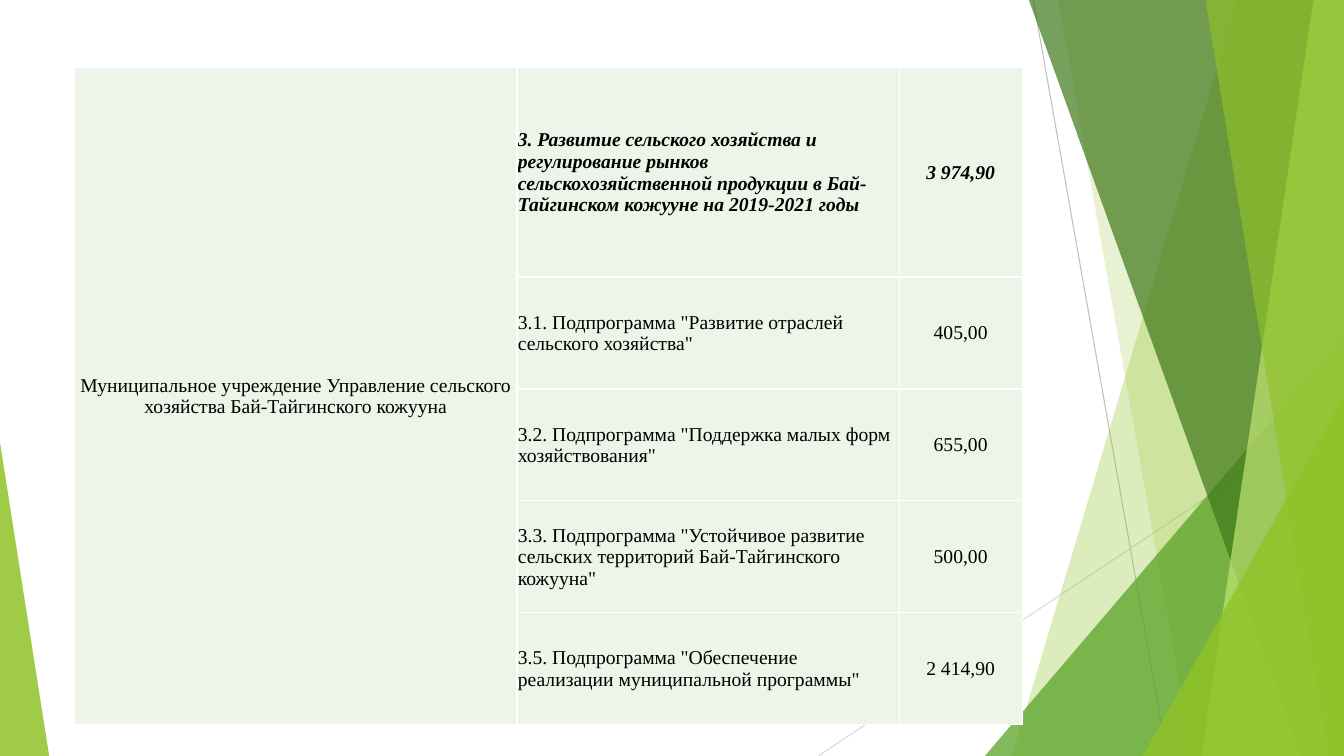
from lxml import etree
from pptx import Presentation
from pptx import util as u
from pptx.dml.color import RGBColor
from pptx.enum import shapes, text
from pptx.oxml.ns import qn

WIDTH, HEIGHT = 33.87, 19.05
COLORS = {
    "lime": "90C226", "green": "54A021", "forest": "3F7819", "pale": "C0E474",
    "gray": "BFBFBF", "silver": "D9D9D9", "cell": "EEF4E8",
    "white": "FFFFFF", "black": "000000",
}
VEILS = [
    (31.19, 25.5, "lime", 30),
    (26.67, 30.05, "lime", 20),
    (25.93, 32.79, "forest", 70),
    (33.1, 30.28, "pale", 70),
    (30.38, 33.48, "lime", 65),
]
OWNER = "Муниципальное учреждение Управление сельского хозяйства Бай-Тайгинского кожууна"
PROGRAMS = [
    ("3. Развитие сельского хозяйства и регулирование рынков сельскохозяйственной "
     "продукции в Бай-Тайгинском кожууне на 2019-2021 годы", "3 974,90"),
    ('3.1. Подпрограмма "Развитие отраслей сельского хозяйства"', "405,00"),
    ('3.2. Подпрограмма "Поддержка малых форм хозяйствования"', "655,00"),
    ('3.3. Подпрограмма "Устойчивое развитие сельских территорий '
     'Бай-Тайгинского кожууна"', "500,00"),
    ('3.5. Подпрограмма "Обеспечение реализации муниципальной программы"', "2 414,90"),
]


class Painter:
    font = "Times New Roman"
    size = 14

    def __init__(self, page):
        self.page = page

    def color(self, name):
        return RGBColor.from_string(COLORS[name])

    def paint(self, shape, color, opacity):
        shape.shadow.inherit = False
        shape.line.fill.background()
        shape.fill.solid()
        shape.fill.fore_color.rgb = self.color(color)
        tint = shape._element.spPr.find(qn("a:solidFill"))[0]
        etree.SubElement(tint, qn("a:alpha"), val=str(opacity * 1000))

    def line(self, start, end, color):
        ends = [u.Cm(value) for value in start + end]
        line = self.page.shapes.add_connector(shapes.MSO_CONNECTOR.STRAIGHT, *ends)
        line.line.color.rgb = self.color(color)
        line.line.width = u.Pt(0.75)
        etree.SubElement(line._element.spPr, qn("a:effectLst"))

    def veil(self, top, bottom, color, opacity):
        points = [(top, 0), (WIDTH, 0), (WIDTH, HEIGHT), (bottom, HEIGHT)]
        corners = [(u.Cm(x), u.Cm(y)) for x, y in points]
        outline = self.page.shapes.build_freeform(*corners[0])
        outline.add_line_segments(corners[1:], close=True)
        self.paint(outline.convert_to_shape(), color, opacity)

    def triangle(self, left, top, width, apex, color, opacity):
        frame = [u.Cm(value) for value in (left, top, width, HEIGHT - top)]
        shape = self.page.shapes.add_shape(shapes.MSO_SHAPE.ISOSCELES_TRIANGLE, *frame)
        shape.adjustments[0] = apex
        self.paint(shape, color, opacity)

    def table(self, left, top, columns, rows):
        frame = [u.Cm(value) for value in (left, top, sum(columns), sum(rows))]
        table = self.page.shapes.add_table(len(rows), len(columns), *frame).table
        table.first_row = table.horz_banding = False
        for column, width in zip(table.columns, columns):
            column.width = u.Cm(width)
        for row, height in zip(table.rows, rows):
            row.height = u.Cm(height)
        for cell in table.iter_cells():
            self.cell_style(cell)
        return table

    def cell_style(self, cell):
        cell.margin_left = cell.margin_right = cell.margin_top = u.Cm(0.02)
        cell.margin_bottom = 0
        cell.vertical_anchor = text.MSO_ANCHOR.MIDDLE
        for side in ("lnL", "lnR", "lnT", "lnB"):
            border = etree.SubElement(cell._tc.tcPr, qn(f"a:{side}"), w=str(u.Pt(1)))
            fill = etree.SubElement(border, qn("a:solidFill"))
            etree.SubElement(fill, qn("a:srgbClr"), val=COLORS["white"])
        cell.fill.solid()
        cell.fill.fore_color.rgb = self.color("cell")

    def cell_text(self, cell, words, centered=True, strong=False):
        para = cell.text_frame.paragraphs[0]
        para.alignment = text.PP_ALIGN.CENTER if centered else text.PP_ALIGN.LEFT
        span = para.add_run()
        span.text = words
        span.font.name = self.font
        span.font.size = u.Pt(self.size)
        span.font.bold = span.font.italic = strong
        span.font.color.rgb = self.color("black")


def main():
    deck = Presentation()
    deck.slide_width, deck.slide_height = u.Cm(WIDTH), u.Cm(HEIGHT)
    painter = Painter(deck.slides.add_slide(deck.slide_layouts[6]))

    painter.line((26.04, 0), (29.41, HEIGHT), "gray")
    painter.line((WIDTH, 10.24), (20.62, HEIGHT), "silver")
    for veil in VEILS[:2]:
        painter.veil(*veil)
    painter.triangle(24.82, 8.46, 9.05, 1, "green", 72)
    for veil in VEILS[2:]:
        painter.veil(*veil)
    painter.triangle(28.8, 9.98, 5.07, 1, "lime", 80)
    painter.triangle(0, 11.15, 1.24, 0, "lime", 85)

    table = painter.table(1.88, 1.7, [11.15, 9.63, 3.1], [5.28] + [2.82] * 4)
    table.cell(0, 0).merge(table.cell(len(PROGRAMS) - 1, 0))
    painter.cell_text(table.cell(0, 0), OWNER)
    for row, (program, amount) in enumerate(PROGRAMS):
        painter.cell_text(table.cell(row, 1), program, centered=False, strong=row == 0)
        painter.cell_text(table.cell(row, 2), amount, strong=row == 0)

    deck.save("out.pptx")


if __name__ == "__main__":
    main()
